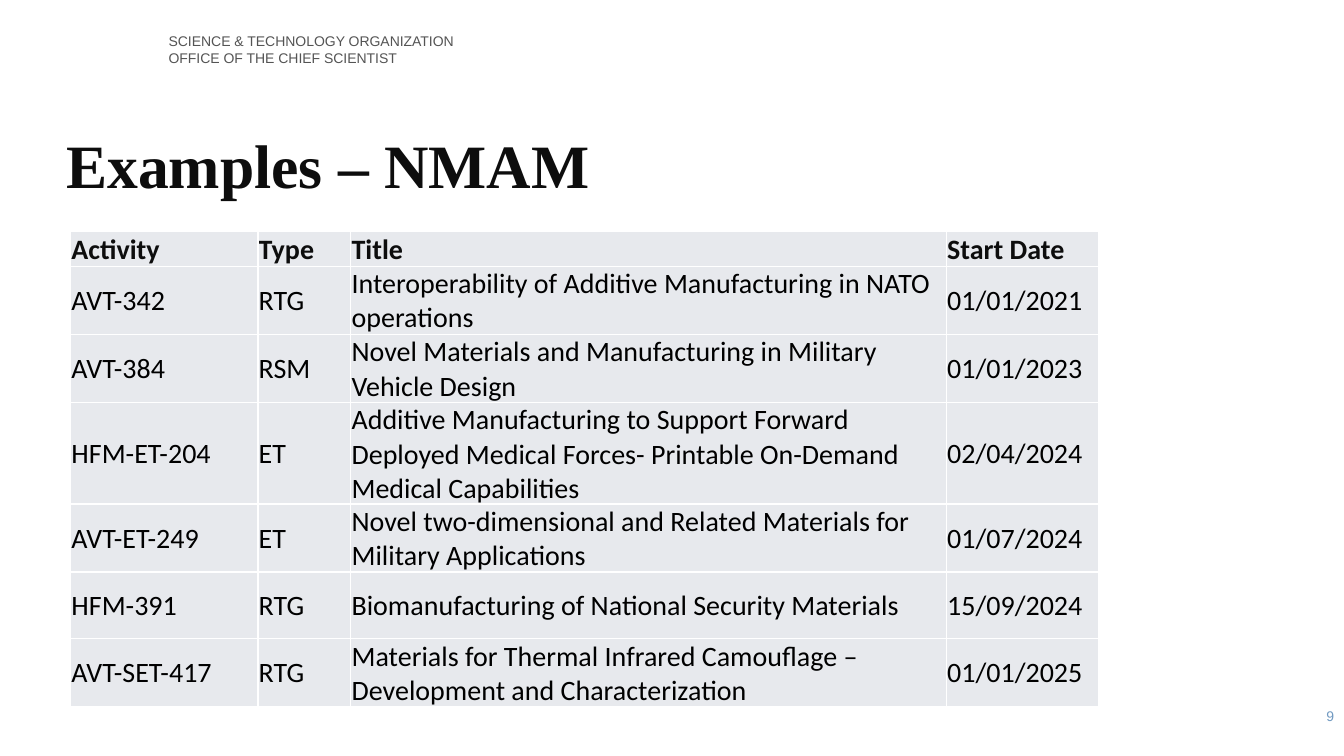
from dataclasses import dataclass

from lxml.etree import SubElement
from pptx import Presentation
from pptx.dml.color import RGBColor
from pptx.enum.text import MSO_ANCHOR, PP_ALIGN
from pptx.oxml.ns import qn
from pptx.util import Cm, Pt

HEADER = ["SCIENCE & TECHNOLOGY ORGANIZATION", "OFFICE OF THE CHIEF SCIENTIST"]
TITLE = "Examples – NMAM"
PAGE_NUMBER = "9"
ACTIVITIES = [
    ("Activity", "Type", "Title", "Start Date"),
    ("AVT-342", "RTG", "Interoperability of Additive Manufacturing in NATO operations", "01/01/2021"),
    ("AVT-384", "RSM", "Novel Materials and Manufacturing in Military Vehicle Design", "01/01/2023"),
    ("HFM-ET-204", "ET", "Additive Manufacturing to Support Forward Deployed Medical Forces- "
     "Printable On-Demand Medical Capabilities", "02/04/2024"),
    ("AVT-ET-249", "ET", "Novel two-dimensional and Related Materials for Military Applications", "01/07/2024"),
    ("HFM-391", "RTG", "Biomanufacturing of National Security Materials", "15/09/2024"),
    ("AVT-SET-417", "RTG", "Materials for Thermal Infrared Camouflage – "
     "Development and Characterization", "01/01/2025"),
]
COLUMN_WIDTHS = [4.72, 2.34, 15.01, 3.84]
LINE_HEIGHT = 0.84
ROW_LINES = [1, 2, 2, 2, 2, 2, 1]


@dataclass(frozen=True)
class Theme:
    heading_font: str = "Times New Roman"
    table_font: str = "Calibri"
    label_font: str = "Arial"
    heading_size: int = 44
    table_size: int = 20
    label_size: int = 10
    dark: str = "0D0D0D"
    body: str = "000000"
    grey: str = "545454"
    blue: str = "719AC1"
    cell: str = "E7E9ED"
    border: str = "FFFFFF"


THEME = Theme()


def style(paragraph, name, size, color, bold=False):
    font = paragraph.font
    font.name, font.size, font.bold = name, Pt(size), bold
    font.color.rgb = RGBColor.from_string(color)


def add_text(page, lines, place, name, size, color, bold=False, align=PP_ALIGN.LEFT, spacing=1.0):
    box = page.shapes.add_textbox(*map(Cm, place))
    frame = box.text_frame
    frame.word_wrap = True
    frame.vertical_anchor = MSO_ANCHOR.MIDDLE
    frame.text = "\n".join(lines)
    for para in frame.paragraphs:
        para.alignment = align
        para.line_spacing = spacing
        style(para, name, size, color, bold)


def add_borders(cell):
    """Draw the four cell borders, which must come before the fill in the XML."""
    properties = cell._tc.get_or_add_tcPr()
    for side in ("a:lnL", "a:lnR", "a:lnT", "a:lnB"):
        line = SubElement(properties, qn(side), w=str(Pt(1)))
        fill = SubElement(line, qn("a:solidFill"))
        SubElement(fill, qn("a:srgbClr"), val=THEME.border)


def add_activity_table(page, left, top):
    width, height = sum(COLUMN_WIDTHS), LINE_HEIGHT * sum(ROW_LINES)
    table = page.shapes.add_table(len(ACTIVITIES), len(COLUMN_WIDTHS),
                                  Cm(left), Cm(top), Cm(width), Cm(height)).table
    table.horz_banding = False
    for column, column_width in zip(table.columns, COLUMN_WIDTHS):
        column.width = Cm(column_width)
    for row_index, (row, lines, values) in enumerate(zip(table.rows, ROW_LINES, ACTIVITIES)):
        row.height = Cm(LINE_HEIGHT * lines)
        heading = row_index == 0
        for cell, value in zip(row.cells, values):
            cell.text = value
            cell.vertical_anchor = MSO_ANCHOR.MIDDLE
            cell.margin_left = cell.margin_right = cell.margin_top = Cm(0.02)
            cell.margin_bottom = 0
            add_borders(cell)
            cell.fill.solid()
            cell.fill.fore_color.rgb = RGBColor.from_string(THEME.cell)
            style(cell.text_frame.paragraphs[0], THEME.table_font, THEME.table_size,
                  THEME.dark if heading else THEME.body, heading)


def main():
    deck = Presentation()
    deck.slide_width, deck.slide_height = Cm(33.87), Cm(19.05)
    page = deck.slides.add_slide(deck.slide_layouts[6])
    add_text(page, HEADER, (4, 0.5, 15, 1.5), THEME.label_font, THEME.label_size, THEME.grey)
    add_text(page, [TITLE], (1.42, 3.1, 29.2, 2.3), THEME.heading_font, THEME.heading_size,
             THEME.dark, bold=True, spacing=0.9)
    add_activity_table(page, 1.78, 5.84)
    add_text(page, [PAGE_NUMBER], (26.25, 17.53, 7.62, 1.02), THEME.label_font, THEME.label_size,
             THEME.blue, align=PP_ALIGN.RIGHT)
    deck.save("out.pptx")


if __name__ == "__main__":
    main()
